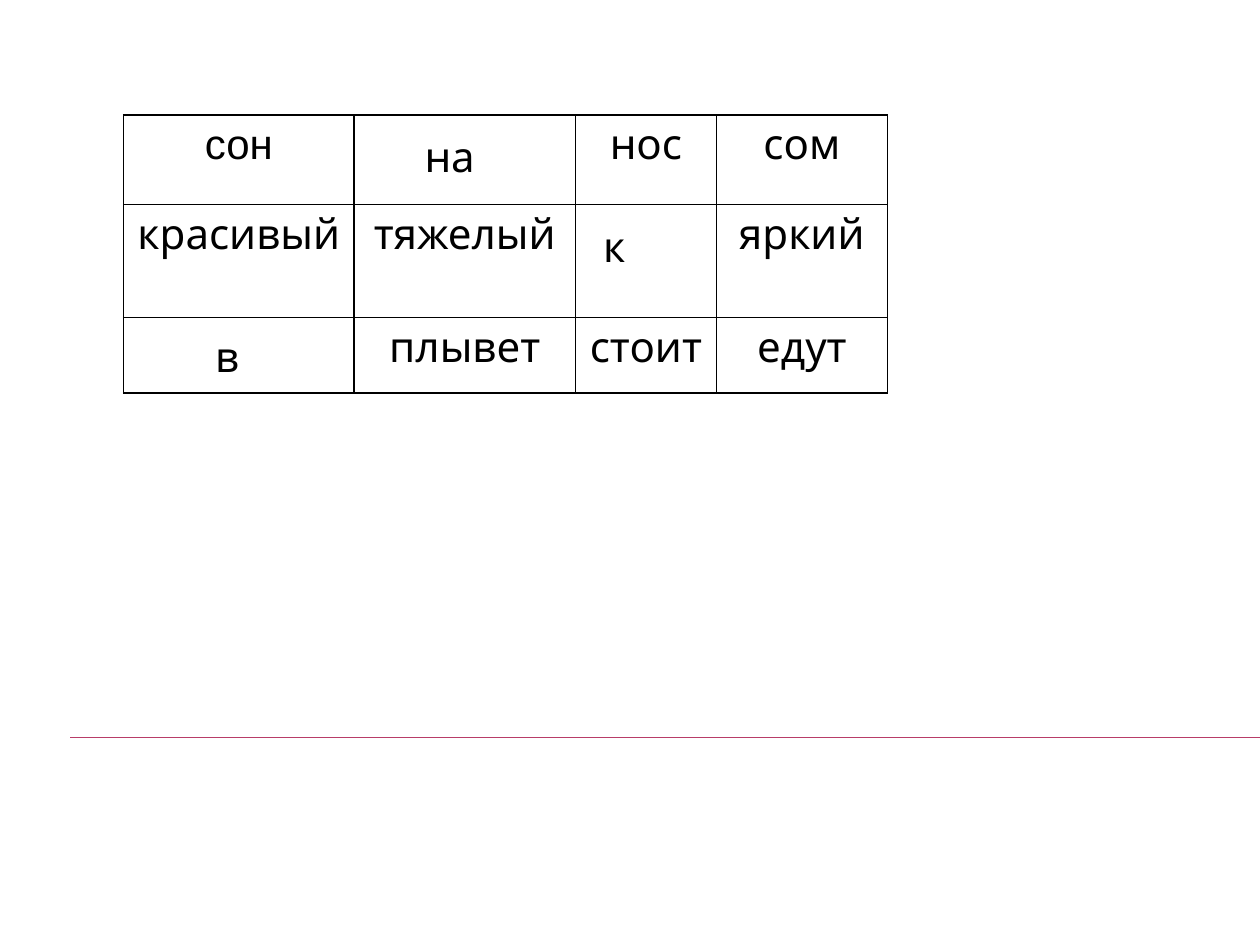
from lxml.etree import SubElement
from pptx import Presentation
from pptx.dml.color import RGBColor
from pptx.enum.shapes import MSO_CONNECTOR
from pptx.enum.text import MSO_AUTO_SIZE, PP_ALIGN
from pptx.oxml.ns import qn
from pptx.util import Cm, Pt

WORDS = [
    ["сон", "", "нос", "сом"],
    ["красивый", "тяжелый", "", "яркий"],
    ["", "плывет", "стоит", "едут"],
]
COL_WIDTHS = [4.65, 4.46, 2.84, 3.45]
ROW_HEIGHTS = [1.8, 2.28, 1.52]
TABLE_LEFT, TABLE_TOP = 2.49, 2.32
PREPOSITIONS = [
    ("на", 8.31, 2.51, 1.8, True),
    ("к", 11.91, 4.32, 0.89, False),
    ("в", 4.09, 6.53, 0.97, False),
]
BLACK, WHITE, RASPBERRY = "000000", "FFFFFF", "B83D68"


def color(value):
    return RGBColor.from_string(value)


def add_word(p, text, font):
    r = p.add_run()
    r.text = text
    r.font.size = Pt(24)
    r.font.name = font
    r.font.color.rgb = color(BLACK)


def format_cell(cell):
    tcPr = cell._tc.get_or_add_tcPr()
    for side in ("a:lnL", "a:lnR", "a:lnT", "a:lnB"):
        ln = SubElement(tcPr, qn(side), w=str(Pt(1)))
        fill = SubElement(ln, qn("a:solidFill"))
        SubElement(fill, qn("a:srgbClr"), val=BLACK)
    cell.fill.solid()
    cell.fill.fore_color.rgb = color(WHITE)


def add_word_table(s):
    size = Cm(sum(COL_WIDTHS)), Cm(sum(ROW_HEIGHTS))
    table = s.shapes.add_table(len(ROW_HEIGHTS), len(COL_WIDTHS),
                               Cm(TABLE_LEFT), Cm(TABLE_TOP), *size).table
    table.first_row = table.horz_banding = False
    for col, width in zip(table.columns, COL_WIDTHS):
        col.width = Cm(width)
    for row, height, words in zip(table.rows, ROW_HEIGHTS, WORDS):
        row.height = Cm(height)
        for cell, word in zip(row.cells, words):
            format_cell(cell)
            if word:
                p = cell.text_frame.paragraphs[0]
                p.alignment = PP_ALIGN.CENTER
                add_word(p, word, "Arial" if word == "сон" else "Karla")


def add_preposition(s, text, left, top, width, wrap):
    tf = s.shapes.add_textbox(Cm(left), Cm(top), Cm(width), Cm(1.27)).text_frame
    tf.word_wrap = wrap
    tf.auto_size = MSO_AUTO_SIZE.SHAPE_TO_FIT_TEXT
    add_word(tf.paragraphs[0], text, "Cabin")


def add_rule(s):
    rule = s.shapes.add_connector(MSO_CONNECTOR.STRAIGHT,
                                  Cm(1.42), Cm(14.86), Cm(25.4), Cm(14.86))
    rule.line.color.rgb = color(RASPBERRY)
    rule.line.width = Pt(0.75)
    SubElement(rule._element.spPr, qn("a:effectLst"))


def main():
    prs = Presentation()
    prs.slide_width, prs.slide_height = Cm(25.4), Cm(19.05)
    s = prs.slides.add_slide(prs.slide_layouts[6])
    add_rule(s)
    add_word_table(s)
    for preposition in PREPOSITIONS:
        add_preposition(s, *preposition)
    prs.save("out.pptx")


if __name__ == "__main__":
    main()
